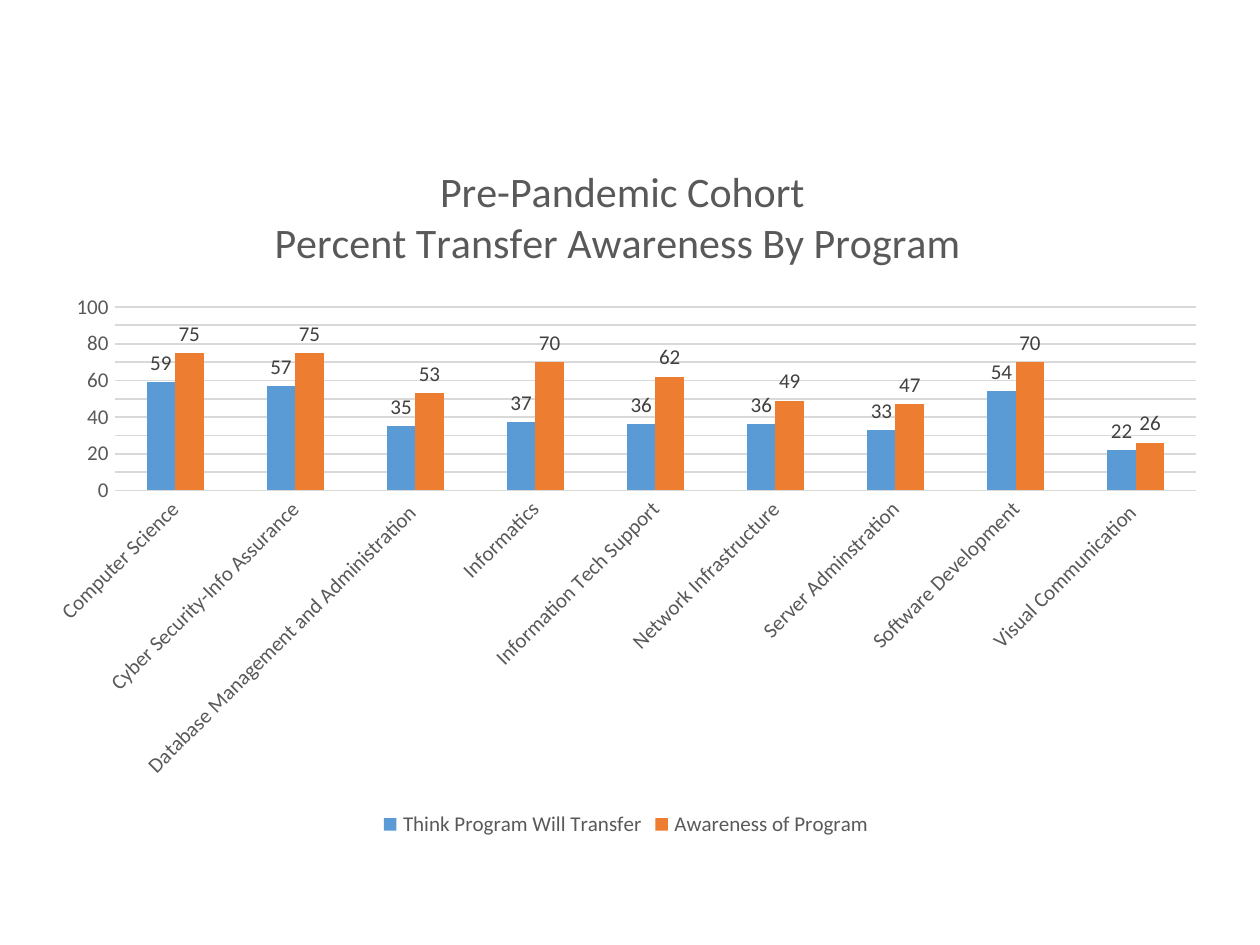
from lxml import etree
from pptx import Presentation
from pptx.chart.data import CategoryChartData
from pptx.dml.color import RGBColor
from pptx.enum.chart import XL_CHART_TYPE as ChartType
from pptx.enum.chart import XL_LABEL_POSITION as LabelPosition
from pptx.enum.chart import XL_LEGEND_POSITION as LegendPosition
from pptx.enum.chart import XL_TICK_MARK as TickMark
from pptx.oxml.ns import qn
from pptx.util import Inches, Pt

COLORS = {
    "transfer": "5B9BD5",
    "awareness": "ED7D31",
    "text": "595959",
    "label": "404040",
    "grid": "D9D9D9",
}
PROGRAMS = {
    "Computer Science": (59, 75),
    "Cyber Security-Info Assurance": (57, 75),
    "Database Management and Administration ": (35, 53),
    "Informatics": (37, 70),
    "Information Tech Support": (36, 62),
    "Network Infrastructure": (36, 49),
    "Server Adminstration": (33, 47),
    "Software Development": (54, 70),
    "Visual Communication ": (22, 26),
}


def style_font(font, size, color):
    font.name = "Calibri"
    font.size = Pt(size)
    font.bold = False
    font.color.rgb = RGBColor.from_string(COLORS[color])


def place(parent, index, **settings):
    """Give a chart part a manual layout in fractions of the chart area."""
    layout = parent.find(qn("c:layout"))
    if layout is None:
        layout = etree.Element(qn("c:layout"))
        parent.insert(index, layout)
    manual = etree.SubElement(layout, qn("c:manualLayout"))
    for tag, value in settings.items():
        etree.SubElement(manual, qn(f"c:{tag}")).set("val", str(value))


prs = Presentation()
prs.slide_width = Inches(7.5)
prs.slide_height = prs.slide_width * 3 // 4
slide = prs.slides.add_slide(prs.slide_layouts[6])

awareness_data = CategoryChartData()
awareness_data.categories = list(PROGRAMS)
transfer, awareness = zip(*PROGRAMS.values())
awareness_data.add_series("Think Program Will Transfer", transfer)
awareness_data.add_series("Awareness of Program", awareness)
chart = slide.shapes.add_chart(
    ChartType.COLUMN_CLUSTERED, Inches(0.19), Inches(0.82),
    Inches(7.07), Inches(4.2), awareness_data).chart
style_font(chart.font, 9, "text")

# Title
heading = chart.chart_title.text_frame
heading.text = "Pre-Pandemic Cohort\nPercent Transfer Awareness By Program "
for line in heading.paragraphs:
    style_font(line.font, 18, "text")
chart.chart_title.include_in_layout = False
place(chart.chart_title._element, 1, xMode="edge", yMode="edge", x=0.2, y=0.03)

# Columns
plot = chart.plots[0]
plot.gap_width, plot.overlap = 219, 1
plot.vary_by_categories = False
for series, color in zip(plot.series, ("transfer", "awareness")):
    series.format.fill.solid()
    series.format.fill.fore_color.rgb = RGBColor.from_string(COLORS[color])
    labels = series.data_labels
    labels.show_value = True
    labels.position = LabelPosition.OUTSIDE_END
    style_font(labels.font, 9, "label")
plot_area = chart._chartSpace.chart.plotArea
place(plot_area, 0, layoutTarget="inner", xMode="edge", yMode="edge",
      x=0.07, y=0.24, w=0.91, h=0.26)

# Axes
programs, percent = chart.category_axis, chart.value_axis
for axis in (programs, percent):
    axis.major_tick_mark = axis.minor_tick_mark = TickMark.NONE
    style_font(axis.tick_labels.font, 9, "text")
percent.minimum_scale, percent.maximum_scale, percent.major_unit = 0, 100, 10
percent.format.line.fill.background()
for line in (programs.format.line, percent.major_gridlines.format.line):
    line.color.rgb = RGBColor.from_string(COLORS["grid"])
    line.width = Pt(0.75)
slant = programs._element.find(qn("c:txPr")).find(qn("a:bodyPr"))
slant.set("rot", "-2700000")
slant.set("vert", "horz")

# Legend
chart.has_legend = True
chart.legend.position = LegendPosition.BOTTOM
chart.legend.include_in_layout = False
style_font(chart.legend.font, 9, "text")

prs.save("out.pptx")
